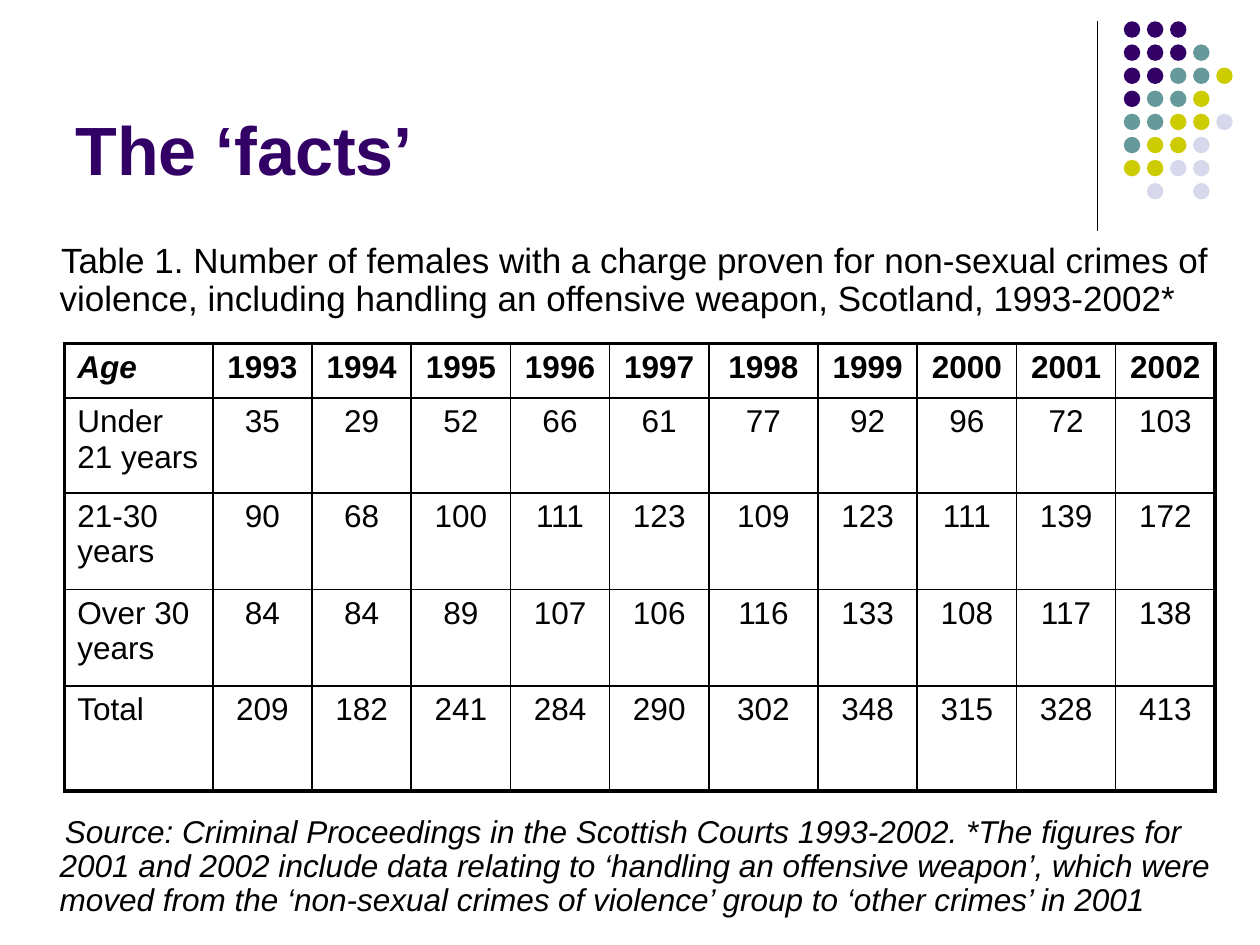
"""Builds the slide 'The facts' with its table of charges proven by age and year."""
from dataclasses import dataclass, field

from lxml import etree
from pptx import Presentation
from pptx.dml.color import RGBColor
from pptx.enum.shapes import MSO_CONNECTOR, MSO_SHAPE
from pptx.enum.text import MSO_ANCHOR, PP_ALIGN
from pptx.oxml.ns import qn
from pptx.slide import Slide
from pptx.table import _Cell
from pptx.text.text import _Paragraph
from pptx.util import Pt

ELLIPSE = MSO_SHAPE.OVAL
STRAIGHT = MSO_CONNECTOR.STRAIGHT
TOP, BOTTOM = MSO_ANCHOR.TOP, MSO_ANCHOR.BOTTOM
LEFT, CENTER = PP_ALIGN.LEFT, PP_ALIGN.CENTER

BLACK = RGBColor(0x00, 0x00, 0x00)
PURPLE = RGBColor(0x33, 0x00, 0x66)
TEAL = RGBColor(0x66, 0x99, 0x99)
LIME = RGBColor(0xCC, 0xCC, 0x00)
LAVENDER = RGBColor(0xD8, 0xD8, 0xEC)

FONT = "Arial"
THIN, THICK = Pt(1), Pt(2.25)

DOT_COLORS = {"P": PURPLE, "T": TEAL, "L": LIME, "V": LAVENDER}
DOT_ROWS = ("PPP", "PPPT", "PPTTL", "PTTL", "TTLLV", "TLLV", "LLVV", ".V.V")
DOT_LEFT, DOT_TOP, DOT_PITCH, DOT_SIZE = 642.2, 12.2, 13.2, 9.4

COLUMN_WIDTHS = [84.6] + [56.7] * 5 + [62.4] + [56.7] * 4
ROW_HEIGHTS = [31, 54.2, 55.2, 55.2, 60]
TABLE_ROWS = (
    ("Age", *range(1993, 2003)),
    ("Under 21 years", 35, 29, 52, 66, 61, 77, 92, 96, 72, 103),
    ("21-30 years", 90, 68, 100, 111, 123, 109, 123, 111, 139, 172),
    ("Over 30 years", 84, 84, 89, 107, 106, 116, 133, 108, 117, 138),
    ("Total", 209, 182, 241, 284, 290, 302, 348, 315, 328, 413),
)


@dataclass
class TextBlock:
    """A text box: its frame in points, wording and format values."""
    text: str
    left: float
    top: float
    width: float
    height: float
    font: dict
    color: RGBColor = BLACK
    anchor: int = TOP
    layout: dict = field(default_factory=dict)
    indents: dict = field(default_factory=dict)


TEXT_BLOCKS = (
    TextBlock("The ‘facts’", 36, 9.4, 594, 102.2,
              {"size": Pt(39), "bold": True}, PURPLE, BOTTOM),
    TextBlock("Table 1. Number of females with a charge proven for non-sexual "
              "crimes of violence, including handling an offensive weapon, "
              "Scotland, 1993-2002*", 0, 135.4, 705.6, 55.4,
              {"size": Pt(20)}, layout={"line_spacing": 0.9},
              indents={"marL": Pt(27), "indent": Pt(0.8)}),
    TextBlock("Source: Criminal Proceedings in the Scottish Courts 1993-2002. "
              "*The figures for 2001 and 2002 include data relating to "
              "‘handling an offensive weapon’, which were moved from the "
              "‘non-sexual crimes of violence’ group to ‘other crimes’ in 2001",
              0, 463, 720, 55.4, {"size": Pt(18), "italic": True},
              layout={"line_spacing": 0.9},
              indents={"marL": Pt(27), "indent": Pt(3)}),
)


def write_span(para: _Paragraph, text: str, font: dict, color: RGBColor) -> None:
    """Add one formatted span to a paragraph."""
    span = para.add_run()
    span.text = text
    for name, value in {"name": FONT, **font}.items():
        setattr(span.font, name, value)
    span.font.color.rgb = color


def draw_text(page: Slide, block: TextBlock) -> None:
    """Draw a wrapped text box."""
    box = page.shapes.add_textbox(Pt(block.left), Pt(block.top),
                                  Pt(block.width), Pt(block.height))
    frame = box.text_frame
    frame.word_wrap = True
    frame.vertical_anchor = block.anchor
    para = frame.paragraphs[0]
    for name, value in block.layout.items():
        setattr(para, name, value)
    for name, value in block.indents.items():
        para._p.get_or_add_pPr().set(name, str(value))
    write_span(para, block.text, block.font, block.color)


def draw_divider(page: Slide) -> None:
    """Draw the vertical line beside the dots."""
    line = page.shapes.add_connector(STRAIGHT, Pt(627), Pt(12.2), Pt(627), Pt(132))
    line.line.color.rgb = BLACK
    line.line.width = Pt(0.75)
    etree.SubElement(line._element.spPr, qn("a:effectLst"))


def draw_dots(page: Slide) -> None:
    """Draw the corner grid of coloured dots."""
    for row, codes in enumerate(DOT_ROWS):
        for column, code in enumerate(codes):
            if code not in DOT_COLORS:
                continue
            dot = page.shapes.add_shape(
                ELLIPSE, Pt(DOT_LEFT + column * DOT_PITCH),
                Pt(DOT_TOP + row * DOT_PITCH), Pt(DOT_SIZE), Pt(DOT_SIZE))
            dot.shadow.inherit = False
            dot.fill.solid()
            dot.fill.fore_color.rgb = DOT_COLORS[code]
            dot.line.fill.background()


def set_borders(cell: _Cell, widths: dict) -> None:
    """Give a cell solid black borders of the given widths."""
    properties = cell._tc.get_or_add_tcPr()
    for side, width in widths.items():
        border = etree.SubElement(properties, qn(f"a:{side}"), w=str(width))
        fill = etree.SubElement(border, qn("a:solidFill"))
        etree.SubElement(fill, qn("a:srgbClr"), val=str(BLACK))


def draw_table(page: Slide) -> None:
    """Draw the table with a thick frame and thin inner lines."""
    frame = page.shapes.add_table(
        len(ROW_HEIGHTS), len(COLUMN_WIDTHS), Pt(37), Pt(196.4),
        Pt(sum(COLUMN_WIDTHS)), Pt(sum(ROW_HEIGHTS)))
    table = frame.table
    table.first_row = table.horz_banding = False
    for column, width in zip(table.columns, COLUMN_WIDTHS):
        column.width = Pt(width)
    for row, height in zip(table.rows, ROW_HEIGHTS):
        row.height = Pt(height)
    last_row, last_column = len(ROW_HEIGHTS) - 1, len(COLUMN_WIDTHS) - 1
    for r, values in enumerate(TABLE_ROWS):
        for c, value in enumerate(values):
            cell = table.cell(r, c)
            set_borders(cell, {"lnL": THICK if c == 0 else THIN,
                               "lnR": THICK if c == last_column else THIN,
                               "lnT": THICK if r == 0 else THIN,
                               "lnB": THICK if r == last_row else THIN})
            cell.fill.background()
            para = cell.text_frame.paragraphs[0]
            para.alignment = CENTER if c else LEFT
            font = {"size": Pt(18), "bold": r == 0, "italic": r == c == 0}
            write_span(para, str(value), font, BLACK)


def main() -> None:
    """Build and save the deck."""
    deck = Presentation()
    deck.slide_width, deck.slide_height = Pt(720), Pt(540)
    page = deck.slides.add_slide(deck.slide_layouts[6])
    draw_divider(page)
    draw_dots(page)
    for block in TEXT_BLOCKS:
        draw_text(page, block)
    draw_table(page)
    deck.save("out.pptx")


if __name__ == "__main__":
    main()
